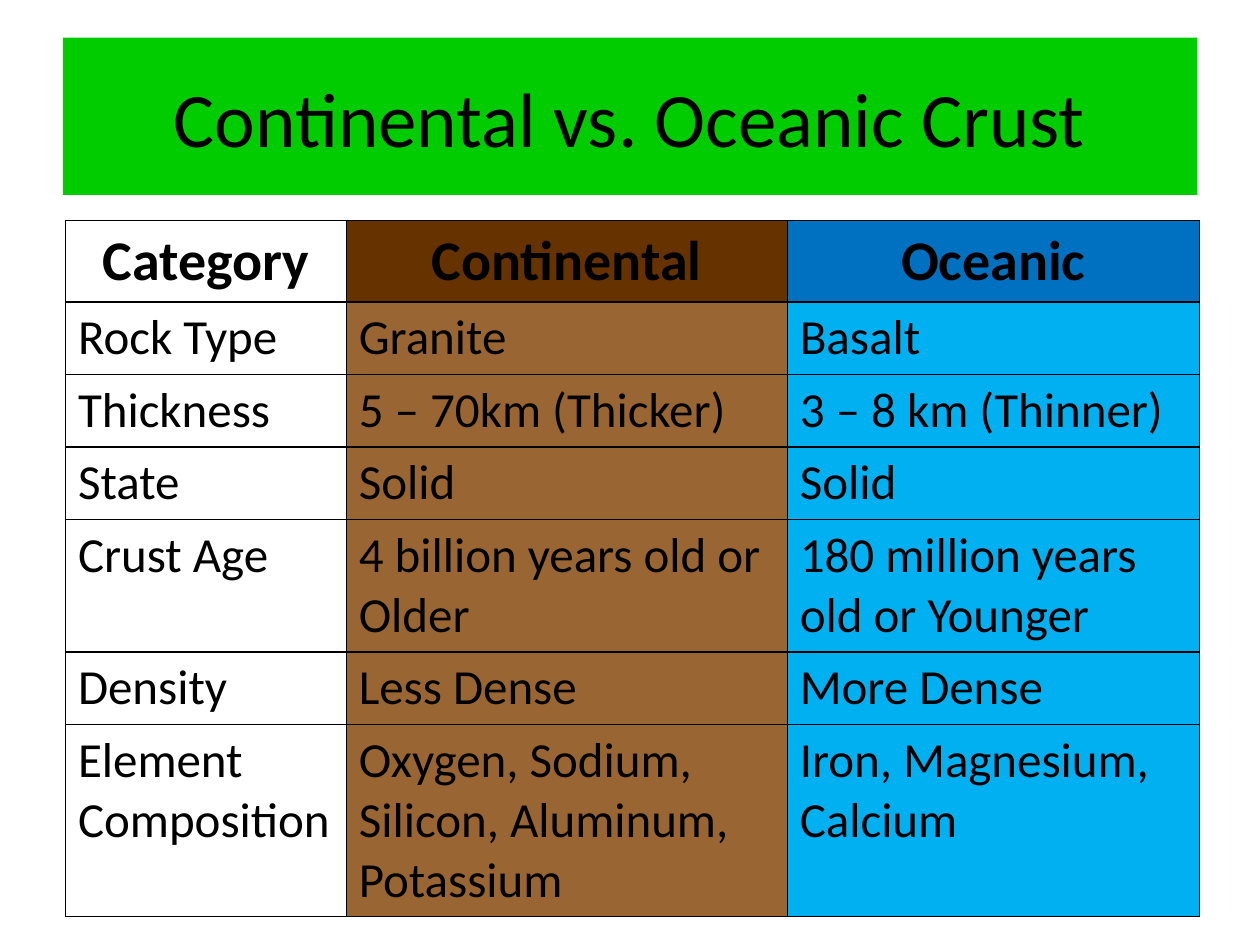
"""Build a slide comparing continental and oceanic crust."""
from lxml import etree
from pptx import Presentation
from pptx import util as u
from pptx.dml import color
from pptx.enum import shapes, text
from pptx.oxml import ns


def rgb(hex_code):
    """Turn a hex string into a colour."""
    return color.RGBColor.from_string(hex_code)


class CrustSlide:
    """Holds the style and the current slide."""

    font = "Calibri"
    ink = "000000"
    border_width = u.Pt(1)

    def __init__(self, deck):
        """Add a blank slide to the deck."""
        self.slide = deck.slides.add_slide(deck.slide_layouts[6])

    def add_words(self, frame, words, size, bold=False, centred=False):
        """Put one styled run into a text frame."""
        frame.word_wrap = True
        paragraph = frame.paragraphs[0]
        paragraph.alignment = text.PP_ALIGN.CENTER if centred else text.PP_ALIGN.LEFT
        run = paragraph.add_run()
        run.text = words
        run.font.name = self.font
        run.font.size = u.Pt(size)
        run.font.bold = bold
        run.font.color.rgb = rgb(self.ink)

    def paint(self, fill, hex_code):
        """Fill with a colour, or leave clear when there is none."""
        if hex_code is None:
            fill.background()
        else:
            fill.solid()
            fill.fore_color.rgb = rgb(hex_code)

    def banner(self, words, left, top, width, height, fill):
        """Draw the filled title bar."""
        bar = self.slide.shapes.add_shape(
            shapes.MSO_SHAPE.RECTANGLE, left, top, width, height)
        bar.shadow.inherit = False
        bar.line.fill.background()
        self.paint(bar.fill, fill)
        bar.text_frame.vertical_anchor = text.MSO_ANCHOR.MIDDLE
        self.add_words(bar.text_frame, words, 44, centred=True)

    def outline(self, cell):
        """Draw a border on the four sides of a cell."""
        properties = cell._tc.get_or_add_tcPr()
        for position, side in enumerate(("lnL", "lnR", "lnT", "lnB")):
            line = etree.Element(ns.qn(f"a:{side}"), w=str(int(self.border_width)))
            solid = etree.SubElement(line, ns.qn("a:solidFill"))
            etree.SubElement(solid, ns.qn("a:srgbClr"), val=self.ink)
            properties.insert(position, line)

    def table(self, rows, left, top, widths, row_height, header_fills, body_fills):
        """Draw a bordered table with one colour per column."""
        grid = self.slide.shapes.add_table(
            len(rows), len(widths), left, top, sum(widths), row_height * len(rows)).table
        grid.first_row = grid.horz_banding = False
        for column, width in zip(grid.columns, widths):
            column.width = width
        for row_index, row in enumerate(rows):
            header = row_index == 0
            fills = header_fills if header else body_fills
            for column_index, (words, fill) in enumerate(zip(row, fills)):
                cell = grid.cell(row_index, column_index)
                self.paint(cell.fill, fill)
                self.outline(cell)
                self.add_words(cell.text_frame, words, 32 if header else 28,
                               bold=header, centred=header)


def main():
    """Build and save the slide."""
    deck = Presentation()
    deck.slide_width, deck.slide_height = u.Cm(25.4), u.Cm(19.05)
    crust = CrustSlide(deck)
    crust.banner("Continental vs. Oceanic Crust",
                 u.Cm(1.27), u.Cm(0.76), u.Cm(22.86), u.Cm(3.17), "00CC00")
    comparison = [
        ("Category", "Continental", "Oceanic"),
        ("Rock Type", "Granite", "Basalt"),
        ("Thickness", "5 – 70km (Thicker)", "3 – 8 km (Thinner)"),
        ("State", "Solid", "Solid"),
        ("Crust Age", "4 billion years old or Older", "180 million years old or Younger"),
        ("Density", "Less Dense", "More Dense"),
        ("Element Composition", "Oxygen, Sodium, Silicon, Aluminum, Potassium",
         "Iron, Magnesium, Calcium"),
    ]
    crust.table(comparison, u.Cm(1.32), u.Cm(4.45),
                [u.Cm(5.66), u.Cm(8.89), u.Cm(8.31)], u.Cm(1.04),
                header_fills=(None, "663300", "0070C0"),
                body_fills=(None, "996633", "00B0F0"))
    deck.save("out.pptx")


if __name__ == "__main__":
    main()
